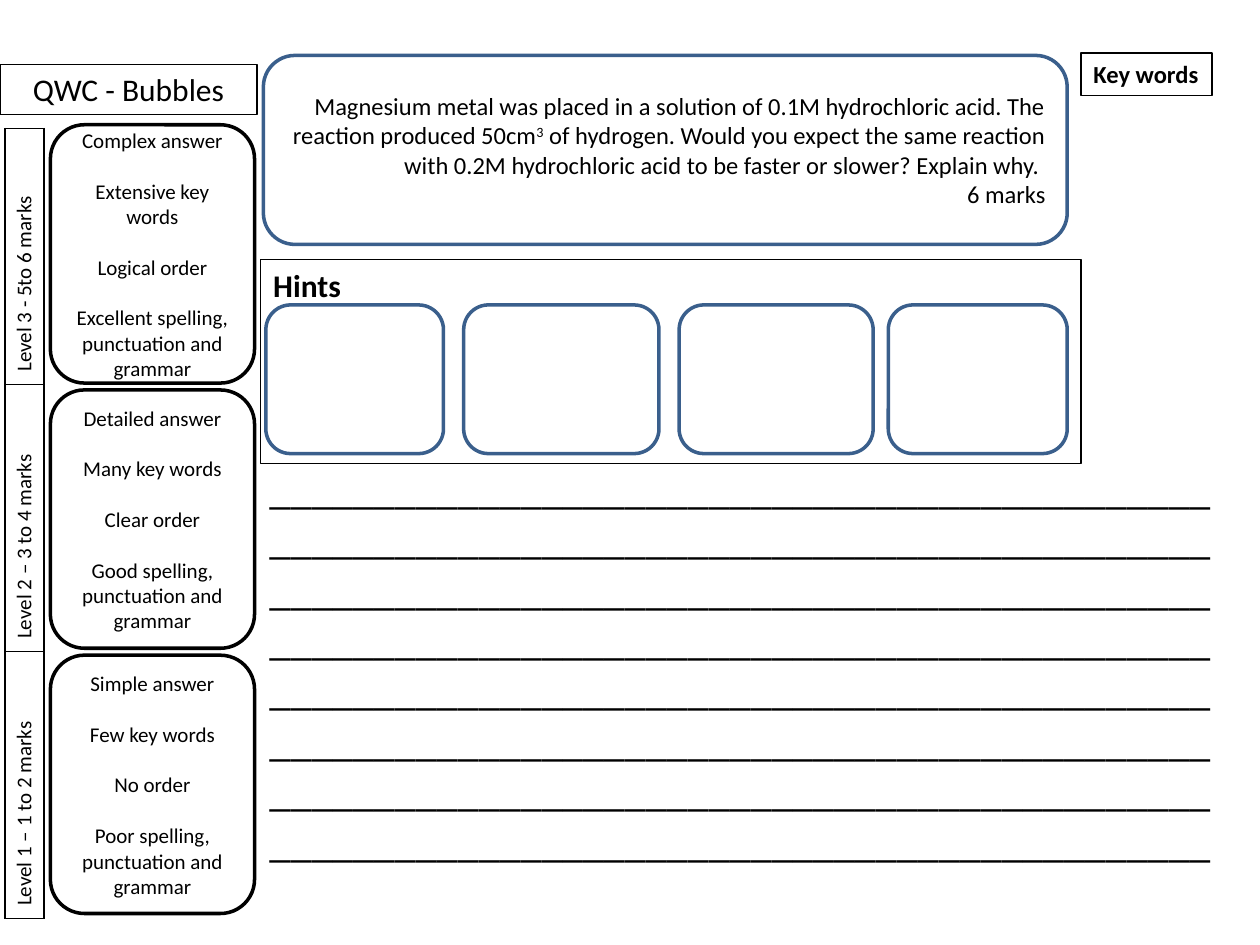
from lxml.etree import SubElement
from pptx import Presentation
from pptx.dml.color import RGBColor
from pptx.enum.shapes import MSO_SHAPE
from pptx.enum.text import MSO_ANCHOR, PP_ALIGN
from pptx.oxml.ns import qn
from pptx.util import Inches, Pt

BLACK, BLUE, WHITE = "000000", "3A5F8C", "FFFFFF"
LEVELS = [
    ("Level 3 - 5to 6 marks", 2.03,
     ["Complex answer", "Extensive key words", "Logical order",
      "Excellent spelling, punctuation and grammar"]),
    ("Level 2 – 3 to 4 marks", 2.12,
     ["Detailed answer", "Many key words", "Clear order",
      "Good spelling, punctuation and grammar"]),
    ("Level 1 – 1 to 2 marks", 2.12,
     ["Simple answer", "Few key words", "No order",
      "Poor spelling, punctuation and grammar"]),
]
QUESTION = [
    [("Magnesium metal was placed in a solution of 0.1M hydrochloric acid. "
      "The reaction produced 50cm", False),
     ("3", True),
     (" of hydrogen. Would you expect the same reaction with 0.2M hydrochloric "
      "acid to be faster or slower? Explain why. ", False)],
    "6 marks",
]
HINT_BOXES = [(2.11, 1.41), (3.68, 1.55), (5.39, 1.54), (7.05, 1.42)]
ANSWER_LINES = ["_" * 45] * 8


def color(value):
    return RGBColor.from_string(value)


def write(frame, paragraphs, size=12, bold=False, align=PP_ALIGN.LEFT,
          anchor=MSO_ANCHOR.TOP, wrap=True, gap=0):
    frame.word_wrap = wrap
    frame.vertical_anchor = anchor
    for index, content in enumerate(paragraphs):
        para = frame.paragraphs[0] if index == 0 else frame.add_paragraph()
        para.alignment = align
        if index:
            para.space_before = Pt(gap)
        spans = [(content, False)] if isinstance(content, str) else content
        for text, raised in spans:
            span = para.add_run()
            span.text = text
            span.font.name = "Calibri"
            span.font.size = Pt(size)
            span.font.bold = bold
            span.font.color.rgb = color(BLACK)
            if raised:
                span.font._element.set("baseline", "30000")


def add_box(page, kind, left, top, width, height, line=BLACK, weight=0.75):
    box = page.shapes.add_shape(
        kind, Inches(left), Inches(top), Inches(width), Inches(height))
    box.shadow.inherit = False
    box.fill.background()
    box.line.color.rgb = color(line)
    box.line.width = Pt(weight)
    return box


def style_cell(cell):
    properties = cell._tc.get_or_add_tcPr()
    properties.set("vert", "vert270")
    for side in ("a:lnL", "a:lnR", "a:lnT", "a:lnB"):
        border = SubElement(properties, qn(side), w=str(Pt(1)))
        fill = SubElement(border, qn("a:solidFill"))
        SubElement(fill, qn("a:srgbClr"), val=BLACK)
    cell.fill.solid()
    cell.fill.fore_color.rgb = color(WHITE)


def add_levels(page):
    heights = [height for _, height, _ in LEVELS]
    table = page.shapes.add_table(
        len(LEVELS), 1, Inches(0.04), Inches(1.02),
        Inches(0.31), Inches(sum(heights))).table
    table.first_row = table.horz_banding = False
    for index, (label, height, criteria) in enumerate(LEVELS):
        table.rows[index].height = Inches(height)
        cell = table.cell(index, 0)
        write(cell.text_frame, [label])
        cell.vertical_anchor = MSO_ANCHOR.MIDDLE
        style_cell(cell)
        box = add_box(page, MSO_SHAPE.ROUNDED_RECTANGLE,
                      0.4, 0.99 + index * 2.105, 1.62, 2.05, weight=2)
        write(box.text_frame, criteria, align=PP_ALIGN.CENTER,
              anchor=MSO_ANCHOR.MIDDLE, gap=14.65)


def main():
    deck = Presentation()
    deck.slide_width, deck.slide_height = Inches(10), Inches(7.5)
    page = deck.slides.add_slide(deck.slide_layouts[6])

    question = add_box(page, MSO_SHAPE.ROUNDED_RECTANGLE,
                       2.09, 0.44, 6.38, 1.5, BLUE, 2)
    write(question.text_frame, QUESTION, size=14, align=PP_ALIGN.RIGHT,
          anchor=MSO_ANCHOR.MIDDLE)
    key_words = add_box(page, MSO_SHAPE.RECTANGLE, 8.58, 0.42, 1.04, 0.34)
    write(key_words.text_frame, ["Key words"], size=14, bold=True, wrap=False)
    hints = add_box(page, MSO_SHAPE.RECTANGLE, 2.07, 2.06, 6.51, 1.62)
    write(hints.text_frame, ["Hints"], size=18, bold=True)
    for left, width in HINT_BOXES:
        add_box(page, MSO_SHAPE.ROUNDED_RECTANGLE,
                left, 2.42, width, 1.18, BLUE, 2)

    answer = page.shapes.add_textbox(
        Inches(2.04), Inches(3.62), Inches(7.78), Inches(3.74))
    write(answer.text_frame, ANSWER_LINES, size=24, wrap=False)
    title = add_box(page, MSO_SHAPE.RECTANGLE, 0, 0.51, 2.04, 0.4)
    write(title.text_frame, ["QWC - Bubbles"], size=18, align=PP_ALIGN.CENTER)
    add_levels(page)
    deck.save("out.pptx")


if __name__ == "__main__":
    main()
